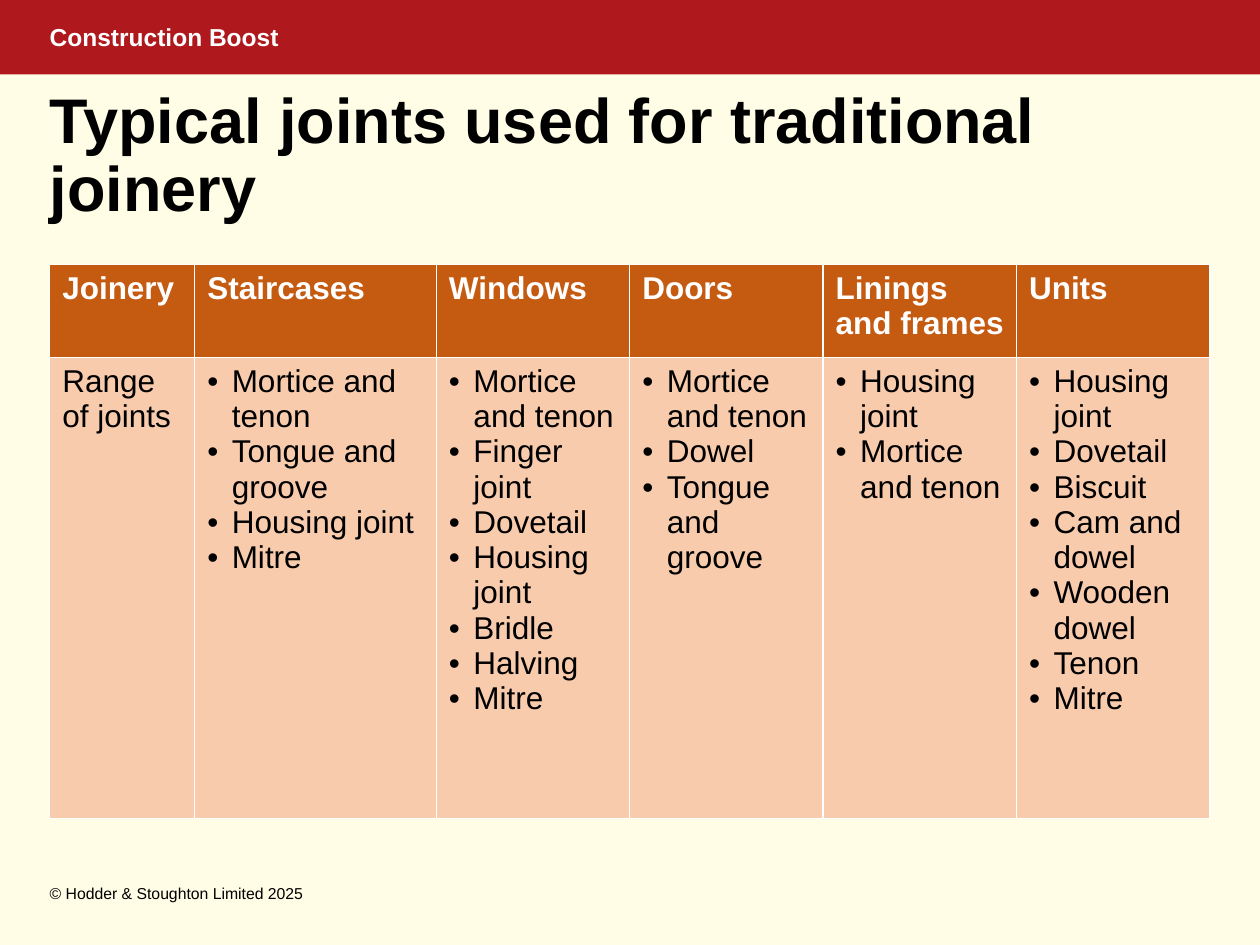
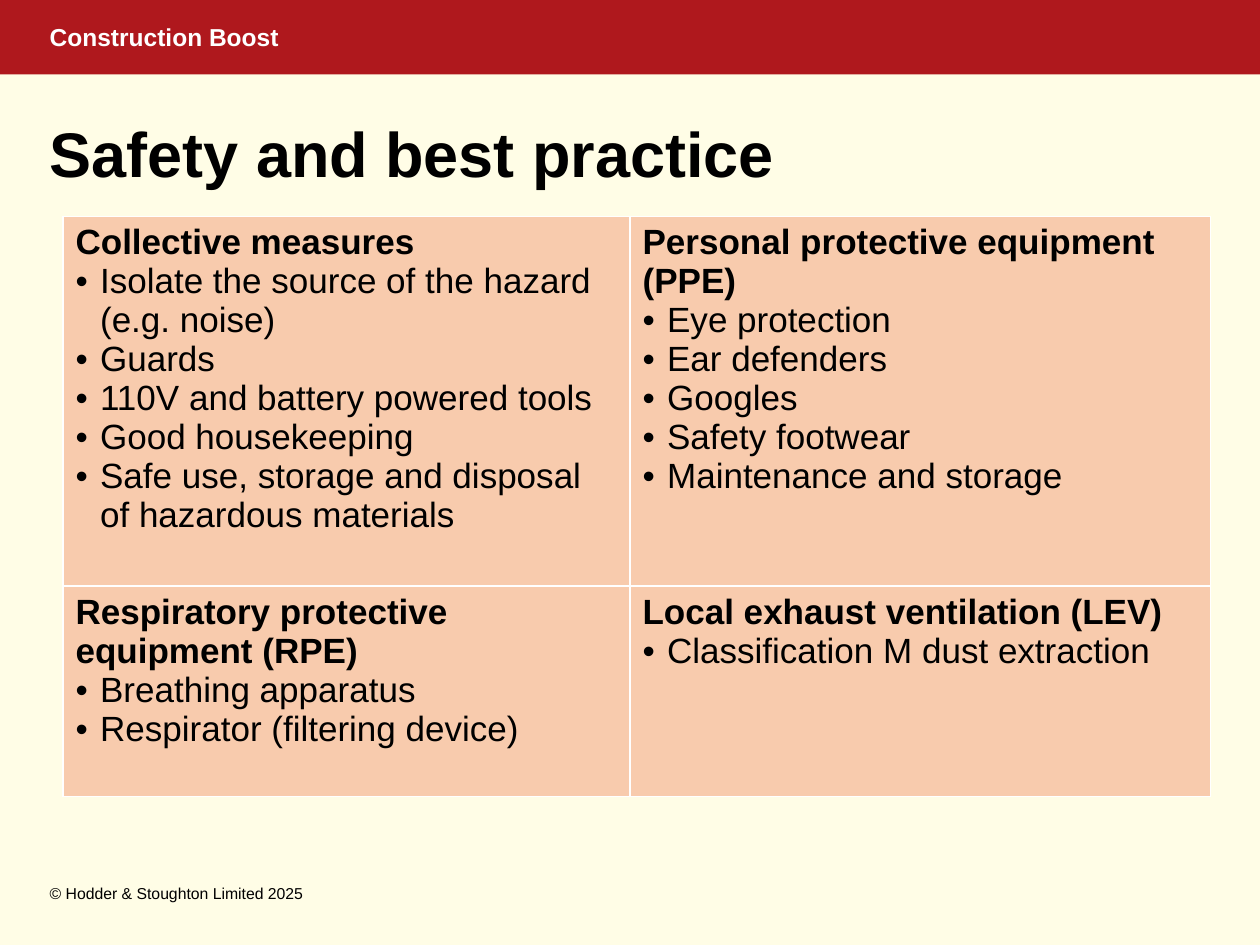
from collections import namedtuple
from dataclasses import dataclass

from lxml import etree
from pptx import Presentation
from pptx.dml.color import RGBColor
from pptx.enum import shapes, text
from pptx.oxml import ns
from pptx.util import Pt

Box = namedtuple("Box", "left top width height")
Entry = namedtuple("Entry", "lead points", defaults=((),))


@dataclass(frozen=True)
class Theme:
    font: str = "Arial"
    page: str = "FFFDE6"
    band: str = "AF181D"
    header: str = "C55A11"
    body: str = "F8CBAD"
    light: str = "FFFFFF"
    dark: str = "000000"
    series_size: int = 14
    title_size: int = 36
    footer_size: int = 9
    joints_size: int = 18
    safety_size: int = 20
    bullet_indent: float = 14
    rule: float = 1


THEME = Theme()
MARGIN = 28.4
CONTENT = 663
BAND = Box(0, 0, 720, 42.5)
TITLE = Box(MARGIN, 56.7, CONTENT, 66.2)
FOOTER = Box(MARGIN, 496, CONTENT, 29)
JOINTS = Box(MARGIN, 151.2, CONTENT, 316.4)
SAFETY = Box(36, 123.7, 655.6, 331.4)

JOINTS_BY_PRODUCT = {
    "Staircases": ("Mortice and tenon", "Tongue and groove", "Housing joint", "Mitre"),
    "Windows": ("Mortice and tenon", "Finger joint", "Dovetail", "Housing joint",
                "Bridle", "Halving", "Mitre"),
    "Doors": ("Mortice and tenon", "Dowel", "Tongue and groove"),
    "Linings and frames": ("Housing joint", "Mortice and tenon"),
    "Units": ("Housing joint", "Dovetail", "Biscuit", "Cam and dowel",
              "Wooden dowel", "Tenon", "Mitre"),
}

SAFETY_MEASURES = [
    [Entry("Collective measures",
           ("Isolate the source of the hazard (e.g. noise)", "Guards",
            "110V and battery powered tools", "Good housekeeping",
            "Safe use, storage and disposal of hazardous materials")),
     Entry("Personal protective equipment (PPE)",
           ("Eye protection", "Ear defenders", "Googles", "Safety footwear",
            "Maintenance and storage"))],
    [Entry("Respiratory protective equipment (RPE)",
           ("Breathing apparatus", "Respirator (filtering device)")),
     Entry("Local exhaust ventilation (LEV)",
           ("Classification M dust extraction",))],
]


def rgb(code):
    return RGBColor.from_string(code)


def points(box):
    return [Pt(length) for length in box]


def style(paragraph, size, color, bold=False):
    for run in paragraph.runs:
        run.font.name = THEME.font
        run.font.size = Pt(size)
        run.font.bold = bold
        run.font.color.rgb = rgb(color)


def write_line(frame, wording, size, color, bold=False, inset=0):
    frame.word_wrap = True
    frame.vertical_anchor = text.MSO_ANCHOR.MIDDLE
    frame.margin_left = frame.margin_right = Pt(inset)
    frame.margin_top = frame.margin_bottom = 0
    frame.text = wording
    line = frame.paragraphs[0]
    line.alignment = text.PP_ALIGN.LEFT
    style(line, size, color, bold)
    return line


def add_band(slide, box):
    band = slide.shapes.add_shape(shapes.MSO_SHAPE.RECTANGLE, *points(box))
    band.shadow.inherit = False
    band.fill.solid()
    band.fill.fore_color.rgb = rgb(THEME.band)
    band.line.fill.background()
    write_line(band.text_frame, "Construction Boost", THEME.series_size,
               THEME.light, bold=True, inset=MARGIN)


def add_title(slide, box, wording):
    title = slide.shapes.add_textbox(*points(box))
    line = write_line(title.text_frame, wording, THEME.title_size, THEME.dark, bold=True)
    line.line_spacing = 0.9


def add_footer(slide, box):
    footer = slide.shapes.add_textbox(*points(box))
    write_line(footer.text_frame, "© Hodder & Stoughton Limited 2025",
               THEME.footer_size, THEME.dark)


def add_bullet(paragraph):
    properties = paragraph._p.get_or_add_pPr()
    properties.set("marL", str(Pt(THEME.bullet_indent)))
    properties.set("indent", str(-Pt(THEME.bullet_indent)))
    etree.SubElement(properties, ns.qn("a:buFont"), typeface=THEME.font)
    etree.SubElement(properties, ns.qn("a:buChar"), char="•")


def add_borders(cell):
    properties = cell._tc.get_or_add_tcPr()
    for side in ("lnL", "lnR", "lnT", "lnB"):
        edge = etree.SubElement(properties, ns.qn(f"a:{side}"), w=str(Pt(THEME.rule)))
        paint = etree.SubElement(edge, ns.qn("a:solidFill"))
        etree.SubElement(paint, ns.qn("a:srgbClr"), val=THEME.light)


def fill_cell(cell, entry, size, fill, color, bold):
    add_borders(cell)
    cell.fill.solid()
    cell.fill.fore_color.rgb = rgb(fill)
    lead = [entry.lead] if entry.lead else []
    cell.text_frame.text = "\n".join([*lead, *entry.points])
    for index, paragraph in enumerate(cell.text_frame.paragraphs):
        is_lead = index < len(lead)
        if not is_lead:
            add_bullet(paragraph)
        style(paragraph, size, color, bold and is_lead)


def share(total, weights):
    return [Pt(round(total * weight / sum(weights), 2)) for weight in weights]


def add_grid(slide, box, rows, column_weights, row_weights, size, has_header):
    grid = slide.shapes.add_table(len(rows), len(rows[0]), *points(box)).table
    grid.first_row = has_header
    grid.horz_banding = False
    for column, width in zip(grid.columns, share(box.width, column_weights)):
        column.width = width
    for row, height in zip(grid.rows, share(box.height, row_weights)):
        row.height = height
    for r, entries in enumerate(rows):
        heading_row = has_header and r == 0
        fill = THEME.header if heading_row else THEME.body
        color = THEME.light if heading_row else THEME.dark
        for c, entry in enumerate(entries):
            fill_cell(grid.cell(r, c), entry, size, fill, color,
                      bold=heading_row or not has_header)


def add_page(deck, title):
    slide = deck.slides.add_slide(deck.slide_layouts[6])
    slide.background.fill.solid()
    slide.background.fill.fore_color.rgb = rgb(THEME.page)
    add_band(slide, BAND)
    add_title(slide, TITLE, title)
    add_footer(slide, FOOTER)
    return slide


def add_joints_slide(deck):
    slide = add_page(deck, "Typical joints used for traditional joinery")
    products = [Entry(name) for name in ("Joinery", *JOINTS_BY_PRODUCT)]
    joints = [Entry("Range of joints"),
              *(Entry("", names) for names in JOINTS_BY_PRODUCT.values())]
    add_grid(slide, JOINTS, [products, joints], (3, 5, 4, 4, 4, 4), (53, 263),
             THEME.joints_size, has_header=True)


def add_safety_slide(deck):
    slide = add_page(deck, "Safety and best practice")
    add_grid(slide, SAFETY, SAFETY_MEASURES, (324, 331.6), (211, 120),
             THEME.safety_size, has_header=False)


def main():
    deck = Presentation()
    deck.slide_width, deck.slide_height = Pt(720), Pt(540)
    add_joints_slide(deck)
    add_safety_slide(deck)
    deck.save("out.pptx")


if __name__ == "__main__":
    main()
